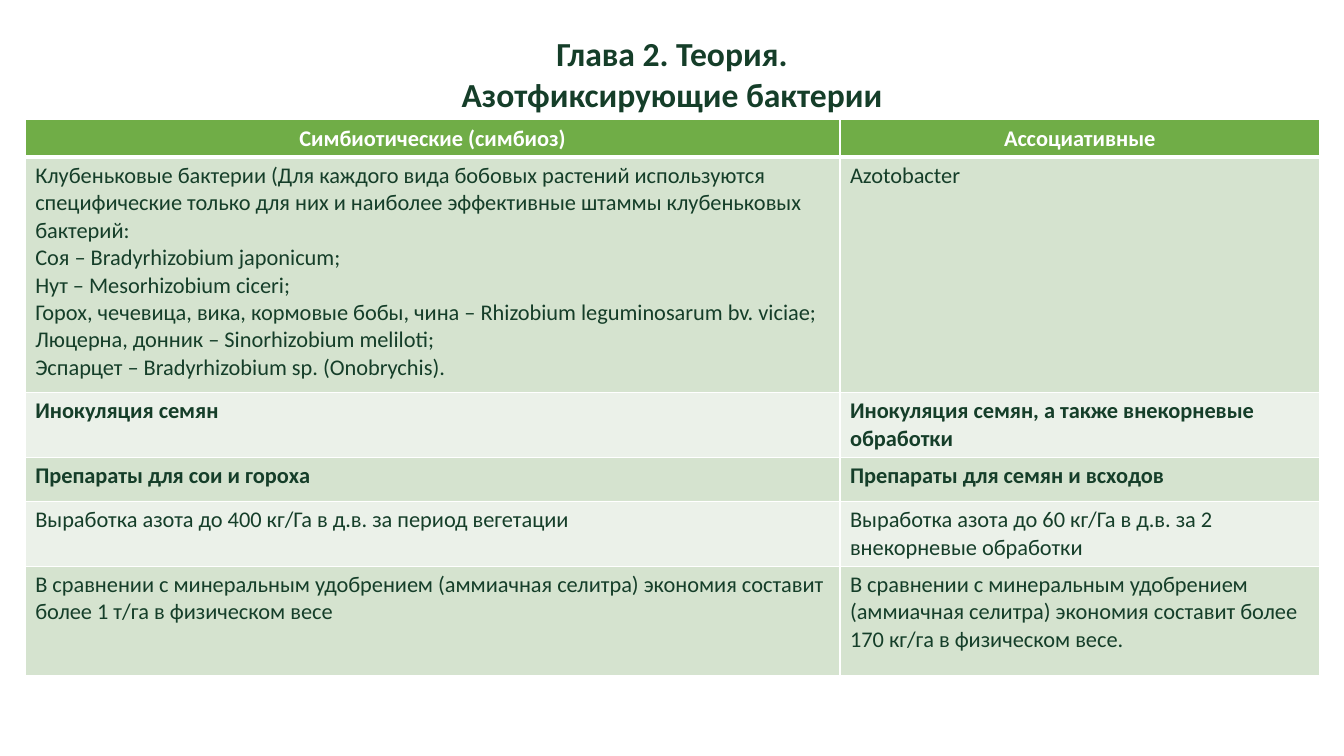
from lxml import etree
from pptx import Presentation
from pptx import util as u
from pptx.dml import color
from pptx.enum import text
from pptx.oxml import ns

PX = 9525
GREEN, DARK, WHITE = "70AD47", "153E29", "FFFFFF"
BANDS = ["D5E3CF", "EBF1E9"]
COLUMN_WIDTHS = [776, 457]
ROW_HEIGHTS = [31, 224, 56, 42, 55, 104]
BOLD_ROWS = {0, 2, 3}

TITLE = ["Глава 2. Теория.", "Азотфиксирующие бактерии"]
COMPARISON = [
    (["Симбиотические (симбиоз)"], ["Ассоциативные"]),
    (
        [
            "Клубеньковые бактерии (Для каждого вида бобовых растений используются "
            "специфические только для них и наиболее эффективные штаммы клубеньковых бактерий:",
            "Соя – Bradyrhizobium japonicum;",
            "Нут – Mesorhizobium ciceri;",
            "Горох, чечевица, вика, кормовые бобы, чина – Rhizobium leguminosarum bv. viciae;",
            "Люцерна, донник – Sinorhizobium meliloti;",
            "Эспарцет – Bradyrhizobium sp. (Onobrychis).",
        ],
        ["Azotobacter"],
    ),
    (["Инокуляция семян"], ["Инокуляция семян, а также внекорневые обработки"]),
    (["Препараты для сои и гороха"], ["Препараты для семян и всходов"]),
    (
        ["Выработка азота до 400 кг/Га в д.в. за период вегетации"],
        ["Выработка азота до 60 кг/Га в д.в. за 2 внекорневые обработки"],
    ),
    (
        ["В сравнении с минеральным удобрением (аммиачная селитра) экономия составит "
         "более 1 т/га в физическом весе"],
        ["В сравнении с минеральным удобрением (аммиачная селитра) экономия составит "
         "более 170 кг/га в физическом весе."],
    ),
]


def px(length):
    """Turn whole pixels into EMU."""
    return u.Emu(length * PX)


def rgb(value):
    """Turn a hex string into a colour."""
    return color.RGBColor.from_string(value)


def write(frame, lines, size=16, ink=DARK, bold=False, centred=False):
    """Write one paragraph per line in the given format."""
    frame.word_wrap = True
    for index, line in enumerate(lines):
        paragraph = frame.add_paragraph() if index else frame.paragraphs[0]
        paragraph.alignment = text.PP_ALIGN.CENTER if centred else text.PP_ALIGN.LEFT
        run = paragraph.add_run()
        run.text = line
        run.font.name = "Calibri"
        run.font.size = u.Pt(size)
        run.font.bold = bold
        run.font.color.rgb = rgb(ink)


def add_borders(cell, bottom):
    """Give a cell white borders with its own bottom width in points."""
    properties = cell._tc.get_or_add_tcPr()
    for side, width in (("L", 1), ("R", 1), ("T", 1), ("B", bottom)):
        line = etree.SubElement(properties, ns.qn(f"a:ln{side}"), w=str(u.Pt(width)))
        fill = etree.SubElement(line, ns.qn("a:solidFill"))
        etree.SubElement(fill, ns.qn("a:srgbClr"), val=WHITE)


def add_title(slide, left, top, width, height):
    """Place the chapter title in its box."""
    box = slide.shapes.add_textbox(px(left), px(top), px(width), px(height))
    write(box.text_frame, TITLE, size=24, bold=True, centred=True)


def add_comparison(slide, left, top):
    """Place the table comparing the two kinds of bacteria."""
    table = slide.shapes.add_table(
        len(ROW_HEIGHTS), len(COLUMN_WIDTHS), px(left), px(top),
        px(sum(COLUMN_WIDTHS)), px(sum(ROW_HEIGHTS)),
    ).table
    for column, width in zip(table.columns, COLUMN_WIDTHS):
        column.width = px(width)
    for number, (row, height, entries) in enumerate(zip(table.rows, ROW_HEIGHTS, COMPARISON)):
        row.height = px(height)
        header = number == 0
        for cell, lines in zip(row.cells, entries):
            add_borders(cell, bottom=3 if header else 1)
            cell.fill.solid()
            cell.fill.fore_color.rgb = rgb(GREEN if header else BANDS[(number - 1) % 2])
            write(cell.text_frame, lines, ink=WHITE if header else DARK,
                  bold=number in BOLD_ROWS, centred=header)


def main():
    """Build the slide and save it."""
    deck = Presentation()
    deck.slide_width, deck.slide_height = px(1280), px(720)
    slide = deck.slides.add_slide(deck.slide_layouts[6])
    add_comparison(slide, 24, 114)
    add_title(slide, 240, 27, 800, 87)
    deck.save("out.pptx")


if __name__ == "__main__":
    main()
